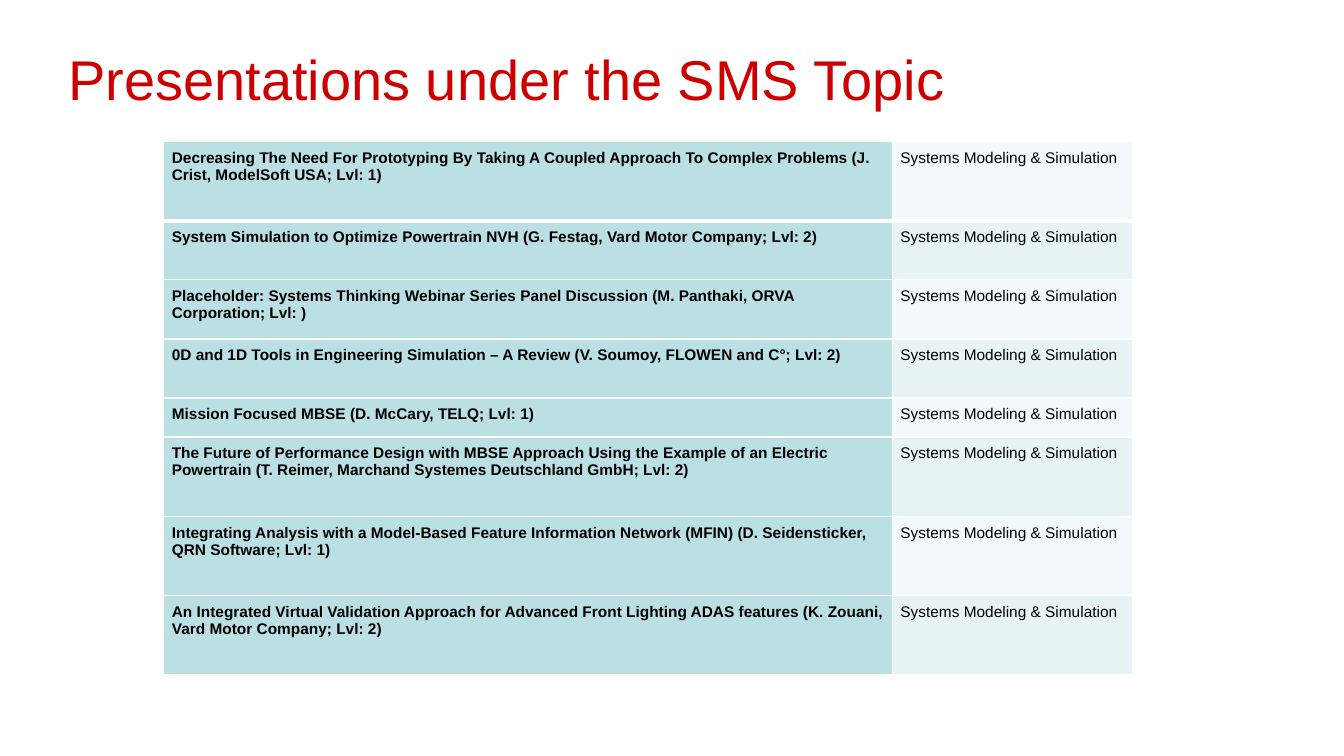
from lxml.etree import SubElement as Sub
from pptx import Presentation
from pptx.dml.color import RGBColor as Rgb
from pptx.enum.text import MSO_ANCHOR as Anchor, PP_ALIGN as Align
from pptx.oxml.ns import qn
from pptx.util import Cm, Pt

HUES = {
    "title": "CC0000", "text": "000000", "line": "FFFFFF",
    "talk": "BBE0E3", "odd": "F3F9FA", "even": "E7F3F4",
}
TOPIC = "Systems Modeling & Simulation"
TALKS = [
    ("Decreasing The Need For Prototyping By Taking A Coupled Approach To "
     "Complex Problems (J. Crist, ModelSoft USA; Lvl: 1)", 2),
    ("System Simulation to Optimize Powertrain NVH "
     "(G. Festag, Vard Motor Company; Lvl: 2)", 1.49),
    ("Placeholder: Systems Thinking Webinar Series Panel Discussion "
     "(M. Panthaki, ORVA Corporation; Lvl: )", 1.49),
    ("0D and 1D Tools in Engineering Simulation – A Review "
     "(V. Soumoy, FLOWEN and C°; Lvl: 2)", 1.49),
    ("Mission Focused MBSE (D. McCary, TELQ; Lvl: 1)", 0.98),
    ("The Future of Performance Design with MBSE Approach Using the Example of "
     "an Electric Powertrain (T. Reimer, Marchand Systemes Deutschland GmbH; Lvl: 2)", 2),
    ("Integrating Analysis with a Model-Based Feature Information Network (MFIN) "
     "(D. Seidensticker, QRN Software; Lvl: 1)", 2),
    ("An Integrated Virtual Validation Approach for Advanced Front Lighting ADAS "
     "features (K. Zouani, Vard Motor Company; Lvl: 2)", 2),
]


class Deck:
    """Hold the style and the current slide."""

    def __init__(self):
        self.show = Presentation()
        self.show.slide_width, self.show.slide_height = Cm(33.87), Cm(19.05)
        self.slide = self.show.slides.add_slide(self.show.slide_layouts[5])
        self.font = "Arial"

    def label(self, frame, text, size, hue, bold=False):
        para = frame.paragraphs[0]
        para.alignment = Align.LEFT
        run = para.add_run()
        run.text = text
        font = run.font
        font.name, font.size, font.bold = self.font, Pt(size), bold
        font.color.rgb = Rgb.from_string(HUES[hue])

    def title(self, text, left, top, width, height):
        shape = self.slide.shapes.title
        shape.left, shape.top = Cm(left), Cm(top)
        shape.width, shape.height = Cm(width), Cm(height)
        shape.text_frame.vertical_anchor = Anchor.MIDDLE
        self.label(shape.text_frame, text, 40, "title")

    def edge(self, cell, side, width):
        line = Sub(cell._tc.get_or_add_tcPr(), qn(f"a:ln{side}"), w=str(Pt(width)))
        fill = Sub(line, qn("a:solidFill"))
        Sub(fill, qn("a:srgbClr"), val=HUES["line"])

    def cell(self, cell, text, hue, bold, top, base):
        cell.margin_left = cell.margin_right = Cm(0.2)
        cell.margin_top = cell.margin_bottom = Cm(0.2)
        cell.vertical_anchor = Anchor.TOP
        for side, width in zip("LRTB", (1, 1, top, base)):
            self.edge(cell, side, width)
        cell.fill.solid()
        cell.fill.fore_color.rgb = Rgb.from_string(HUES[hue])
        self.label(cell.text_frame, text, 11, "text", bold)

    def table(self, talks, left, top, widths):
        high = sum(tall for _, tall in talks)
        grid = self.slide.shapes.add_table(
            len(talks), len(widths), Cm(left), Cm(top), Cm(sum(widths)), Cm(high)).table
        grid.first_row = grid.horz_banding = False
        for col, width in zip(grid.columns, widths):
            col.width = Cm(width)
        for i, (talk, tall) in enumerate(talks):
            grid.rows[i].height = Cm(tall)
            edges = (3 if i == 1 else 1, 3 if i == 0 else 1)
            self.cell(grid.cell(i, 0), talk, "talk", True, *edges)
            self.cell(grid.cell(i, 1), TOPIC, "even" if i % 2 else "odd", False, *edges)


def main():
    deck = Deck()
    deck.title("Presentations under the SMS Topic", 1.47, 0.38, 30.48, 3.18)
    deck.table(TALKS, 4.13, 3.56, (18.36, 6.05))
    deck.show.save("out.pptx")


if __name__ == "__main__":
    main()
